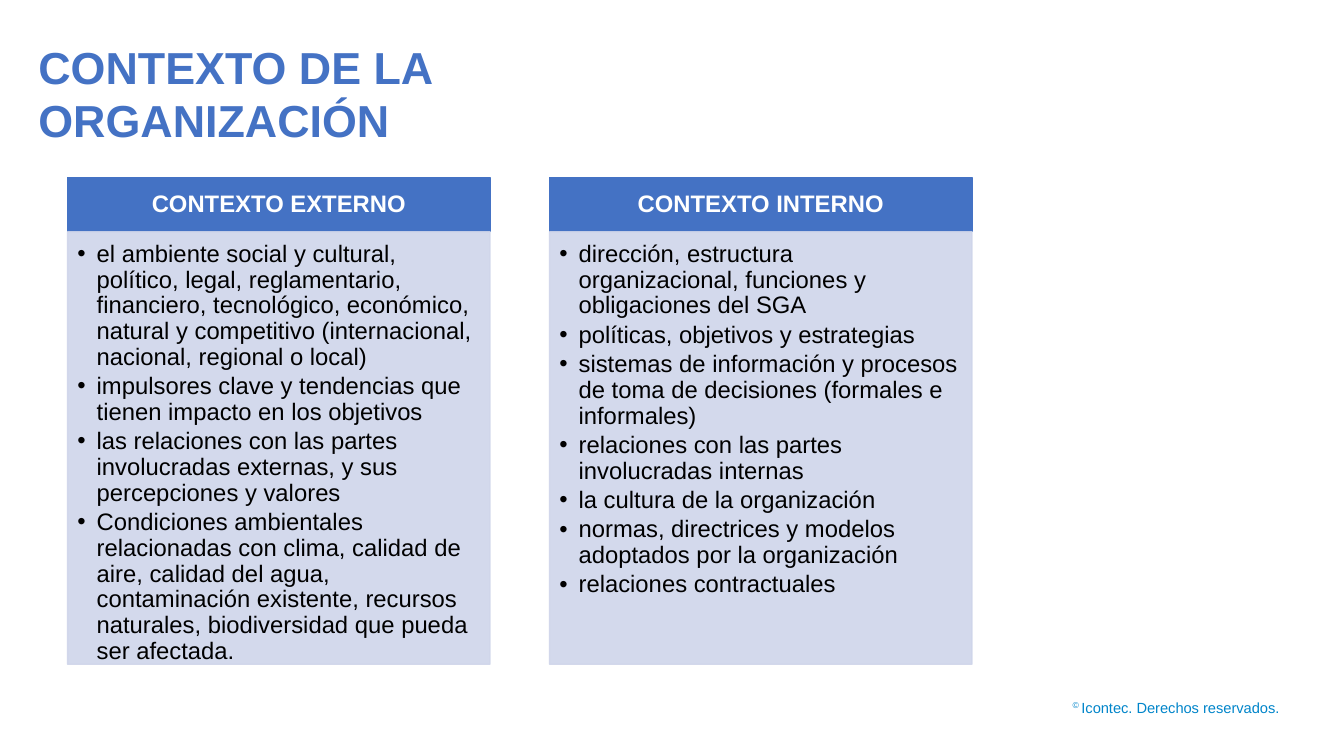
from dataclasses import dataclass

from lxml import etree
from pptx import Presentation
from pptx.dml import color
from pptx.enum import shapes, text
from pptx.oxml import ns
from pptx.util import Inches, Pt

FONT = "Arial"
BLUE, PALE, WHITE, BLACK, CYAN = "4472C4", "CFD5EA", "FFFFFF", "000000", "0085CA"
PANEL_LEFT, PANEL_STEP, PANEL_WIDTH = 0.67, 4.78, 4.19
HEADER_TOP, HEADER_HEIGHT, BODY_HEIGHT = 1.76, 0.54, 4.29


@dataclass
class Panel:
    heading: str
    items: list[str]


PANELS = [
    Panel("CONTEXTO EXTERNO", [
        "el ambiente social y cultural, político, legal, reglamentario, financiero, "
        "tecnológico, económico, natural y competitivo (internacional, nacional, "
        "regional o local)",
        "impulsores clave y tendencias que tienen impacto en los objetivos",
        "las relaciones con las partes involucradas externas, y sus percepciones y valores",
        "Condiciones ambientales relacionadas con clima, calidad de aire, calidad del agua, "
        "contaminación existente, recursos naturales, biodiversidad que pueda ser afectada.",
    ]),
    Panel("CONTEXTO INTERNO", [
        "dirección, estructura organizacional, funciones y obligaciones del SGA",
        "políticas, objetivos y estrategias",
        "sistemas de información y procesos de toma de decisiones (formales e informales)",
        "relaciones con las partes involucradas internas",
        "la cultura de la organización",
        "normas, directrices y modelos adoptados por la organización",
        "relaciones contractuales",
    ]),
]


def rgb(value: str) -> color.RGBColor:
    return color.RGBColor.from_string(value)


def style(font, size: float, colour: str, bold: bool = False) -> None:
    font.name, font.size, font.bold = FONT, Pt(size), bold
    font.color.rgb = rgb(colour)


def set_margins(frame, left: float, top: float, right: float, bottom: float) -> None:
    frame.margin_left, frame.margin_top = Inches(left), Inches(top)
    frame.margin_right, frame.margin_bottom = Inches(right), Inches(bottom)


def add_block(page, left: float, top: float, height: float, fill: str, opacity: int = 100):
    """Add a panel rectangle whose fill and line share colour and opacity (percent)."""
    block = page.shapes.add_shape(shapes.MSO_SHAPE.RECTANGLE, Inches(left), Inches(top),
                                  Inches(PANEL_WIDTH), Inches(height))
    block.shadow.inherit = False
    block.line.width = Pt(1)
    block.line.fill.solid()
    block.fill.solid()
    for paint in (block.fill, block.line.fill):
        paint.fore_color.rgb = rgb(fill)
    if opacity < 100:
        for tint in block._element.spPr.iter(ns.qn("a:srgbClr")):
            etree.SubElement(tint, ns.qn("a:alpha"), val=str(opacity * 1000))
    block.text_frame.word_wrap = True
    return block


def add_bullet(para) -> None:
    properties = para._p.get_or_add_pPr()
    properties.set("marL", str(Inches(0.19)))
    properties.set("indent", str(-Inches(0.19)))
    etree.SubElement(properties, ns.qn("a:buFont"), typeface=FONT)
    etree.SubElement(properties, ns.qn("a:buChar"), char="•")


def add_panel(page, panel: Panel, left: float) -> None:
    header = add_block(page, left, HEADER_TOP, HEADER_HEIGHT, BLUE)
    frame = header.text_frame
    set_margins(frame, 0.13, 0.08, 0.13, 0.08)
    frame.vertical_anchor = text.MSO_ANCHOR.MIDDLE
    frame.text = panel.heading
    para = frame.paragraphs[0]
    para.alignment = text.PP_ALIGN.CENTER
    para.line_spacing = 0.9
    style(para.runs[0].font, 17, WHITE, bold=True)

    body = add_block(page, left, HEADER_TOP + HEADER_HEIGHT, BODY_HEIGHT, PALE, opacity=90)
    frame = body.text_frame
    set_margins(frame, 0.1, 0.1, 0.13, 0.15)
    frame.vertical_anchor = text.MSO_ANCHOR.TOP
    frame.text = "\n".join(panel.items)
    for para in frame.paragraphs:
        add_bullet(para)
        para.alignment = text.PP_ALIGN.LEFT
        para.line_spacing = 0.9
        para.space_after = Pt(2.6)
        style(para.runs[0].font, 17, BLACK)


def format_title(title) -> None:
    title.left, title.top = Inches(0.28), Inches(0.34)
    title.width, title.height = Inches(4.2), Inches(1.18)
    frame = title.text_frame
    frame.text = "CONTEXTO DE LA ORGANIZACIÓN"
    frame.word_wrap = True
    frame.auto_size = text.MSO_AUTO_SIZE.NONE
    frame.vertical_anchor = text.MSO_ANCHOR.TOP
    para = frame.paragraphs[0]
    para.alignment = text.PP_ALIGN.LEFT
    style(para.runs[0].font, 32, BLUE, bold=True)


def add_copyright(page) -> None:
    box = page.shapes.add_textbox(Inches(10.47), Inches(6.88), Inches(2.32), Inches(0.29))
    box.text_frame.word_wrap = True
    para = box.text_frame.paragraphs[0]
    para.alignment = text.PP_ALIGN.RIGHT
    for words, baseline in (("© ", 30), ("Icontec. Derechos reservados.", 0)):
        span = para.add_run()
        span.text = words
        style(span.font, 10.5, CYAN)
        span._r.get_or_add_rPr().set("baseline", str(baseline * 1000))


def main() -> None:
    deck = Presentation()
    deck.slide_width, deck.slide_height = Inches(13.33), Inches(7.5)
    page = deck.slides.add_slide(deck.slide_layouts.get_by_name("Title Only"))
    format_title(page.shapes.title)
    for index, panel in enumerate(PANELS):
        add_panel(page, panel, PANEL_LEFT + index * PANEL_STEP)
    add_copyright(page)
    deck.save("out.pptx")


if __name__ == "__main__":
    main()
